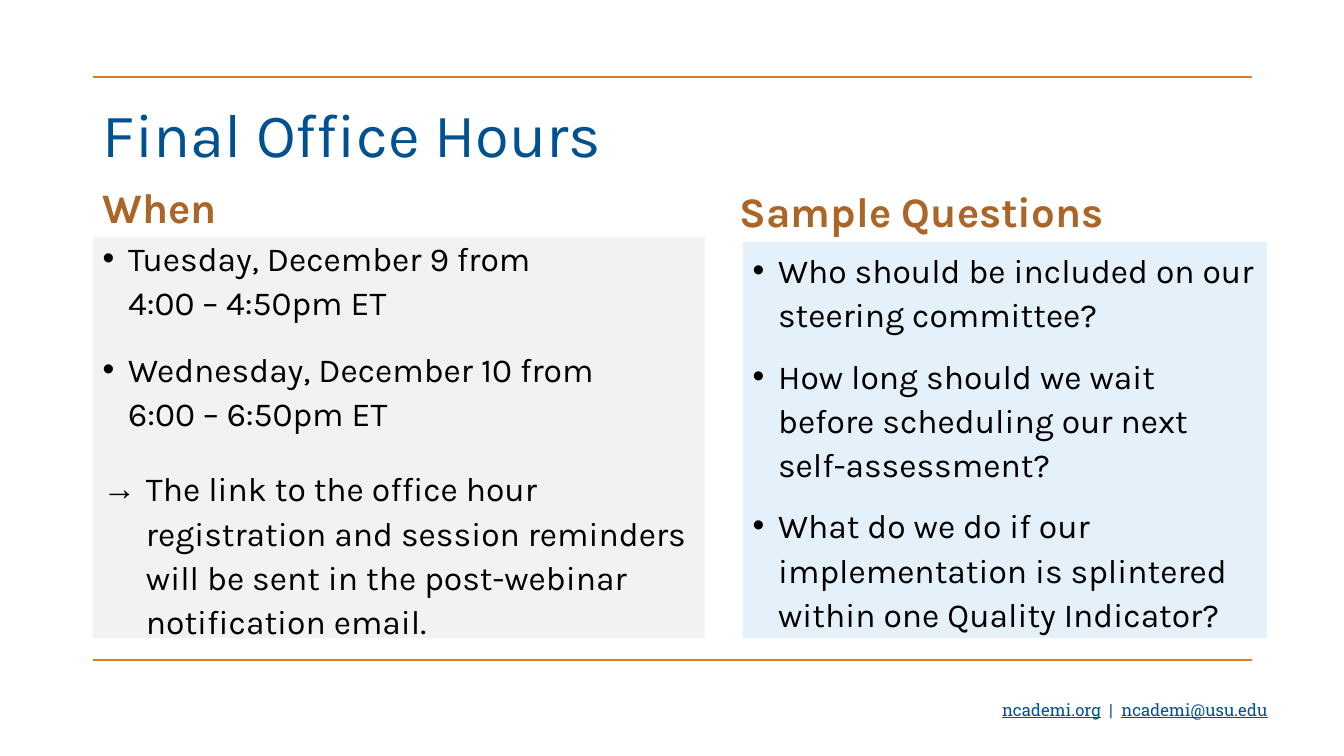
from lxml import etree
from pptx import Presentation
from pptx.dml.color import RGBColor
from pptx.enum.shapes import MSO_CONNECTOR, MSO_SHAPE
from pptx.enum.text import MSO_ANCHOR, PP_ALIGN
from pptx.oxml.ns import qn
from pptx.util import Cm, Pt

STRAIGHT, RECT = MSO_CONNECTOR.STRAIGHT, MSO_SHAPE.RECTANGLE
MIDDLE, BOTTOM = MSO_ANCHOR.MIDDLE, MSO_ANCHOR.BOTTOM
LEFT, CENTER = PP_ALIGN.LEFT, PP_ALIGN.CENTER

BLUE = RGBColor(0x00, 0x51, 0x91)
ORANGE = RGBColor(0xD8, 0x7D, 0x26)
BROWN = RGBColor(0xAB, 0x65, 0x27)
BLACK = RGBColor(0x00, 0x00, 0x00)
GREY_FILL = RGBColor(0xF2, 0xF2, 0xF2)
BLUE_FILL = RGBColor(0xE5, 0xF1, 0xFA)

TITLE = {"name": "Karla", "size": Pt(44)}
HEADING = {"name": "Karla", "size": Pt(30), "bold": True}
BODY = {"name": "Karla", "size": Pt(24)}
FOOTER = {"name": "Roboto Slab", "size": Pt(12)}

MARGIN, RULE_WIDTH = 2.34, 29.21

WHEN = [
    ("•", 0.64, 0, 6, "Tuesday, December 9 from\v4:00 – 4:50pm ET"),
    ("•", 0.64, 10, 12, "Wednesday, December 10 from\v6:00 – 6:50pm ET"),
    ("→", 1.09, 10, 0, "The link to the office hour registration and session "
     "reminders will be sent in the post-webinar notification email."),
]
QUESTIONS = [
    ("•", 0.64, 0, 6, "Who should be included on our steering committee?"),
    ("•", 0.64, 6, 6, "How long should we wait before scheduling our next "
     "self-assessment?"),
    ("•", 0.64, 6, 6, "What do we do if our implementation is splintered "
     "within one Quality Indicator?"),
]


def style_run(r, style, color):
    for name, value in style.items():
        setattr(r.font, name, value)
    r.font.color.rgb = color


def add_text_box(s, box, anchor):
    tf = s.shapes.add_textbox(*map(Cm, box)).text_frame
    tf.word_wrap = True
    tf.vertical_anchor = anchor
    return tf


def add_line_of_text(s, box, text, style, color, anchor, spacing):
    p = add_text_box(s, box, anchor).paragraphs[0]
    p.line_spacing = spacing
    r = p.add_run()
    r.text = text
    style_run(r, style, color)
    return p


def add_bullet(p, mark, indent):
    pPr = p._p.get_or_add_pPr()
    pPr.set("marL", str(Cm(indent)))
    pPr.set("indent", str(-Cm(indent)))
    etree.SubElement(pPr, qn("a:buFont")).set("typeface", "Arial")
    etree.SubElement(pPr, qn("a:buChar")).set("char", mark)


def add_panel(s, box, fill, items):
    sp = s.shapes.add_shape(RECT, *map(Cm, box))
    sp.shadow.inherit = False
    sp.fill.solid()
    sp.fill.fore_color.rgb = fill
    sp.line.fill.background()
    tf = sp.text_frame
    tf.word_wrap = True
    tf.vertical_anchor = MIDDLE
    for i, (mark, indent, before, after, text) in enumerate(items):
        p = tf.add_paragraph() if i else tf.paragraphs[0]
        p.text = text
        p.alignment = LEFT
        p.line_spacing = 1.1
        p.space_before, p.space_after = Pt(before), Pt(after)
        add_bullet(p, mark, indent)
        for r in p.runs:
            style_run(r, BODY, BLACK)


def add_column(s, heading_box, heading, panel_box, fill, items):
    p = add_line_of_text(s, heading_box, heading, HEADING, BROWN, BOTTOM, 1.1)
    p.space_after = Pt(6)
    add_panel(s, panel_box, fill, items)


def add_rule(s, x, y, width):
    line = s.shapes.add_connector(STRAIGHT, Cm(x), Cm(y), Cm(x + width), Cm(y))
    line.line.color.rgb = ORANGE
    line.line.width = Pt(1.5)
    etree.SubElement(line._element.spPr, qn("a:effectLst"))


def add_footer(s, box):
    p = add_text_box(s, box, MSO_ANCHOR.TOP).paragraphs[0]
    p.alignment = CENTER
    for text, underline in (("ncademi.org", True), ("  |  ", False),
                            ("ncademi@usu.edu", True)):
        r = p.add_run()
        r.text = text
        style_run(r, {**FOOTER, "underline": underline}, BLUE)


def main():
    prs = Presentation()
    prs.slide_width, prs.slide_height = Cm(33.87), Cm(19.05)
    s = prs.slides.add_slide(prs.slide_layouts[6])
    for y in (1.93, 16.64):
        add_rule(s, MARGIN, y, RULE_WIDTH)
    add_line_of_text(s, (MARGIN, 2.31, RULE_WIDTH, 2.29), "Final Office Hours",
                     TITLE, BLUE, MIDDLE, 0.9)
    add_column(s, (MARGIN, 4.32, 16.13, 1.65), "When",
               (MARGIN, 5.98, 15.42, 10.1), GREY_FILL, WHEN)
    add_column(s, (18.39, 4.42, 15.04, 1.65), "Sample Questions",
               (18.72, 6.1, 13.21, 9.98), BLUE_FILL, QUESTIONS)
    add_footer(s, (23.52, 17.5, 10.16, 0.76))
    prs.save("out.pptx")


if __name__ == "__main__":
    main()
